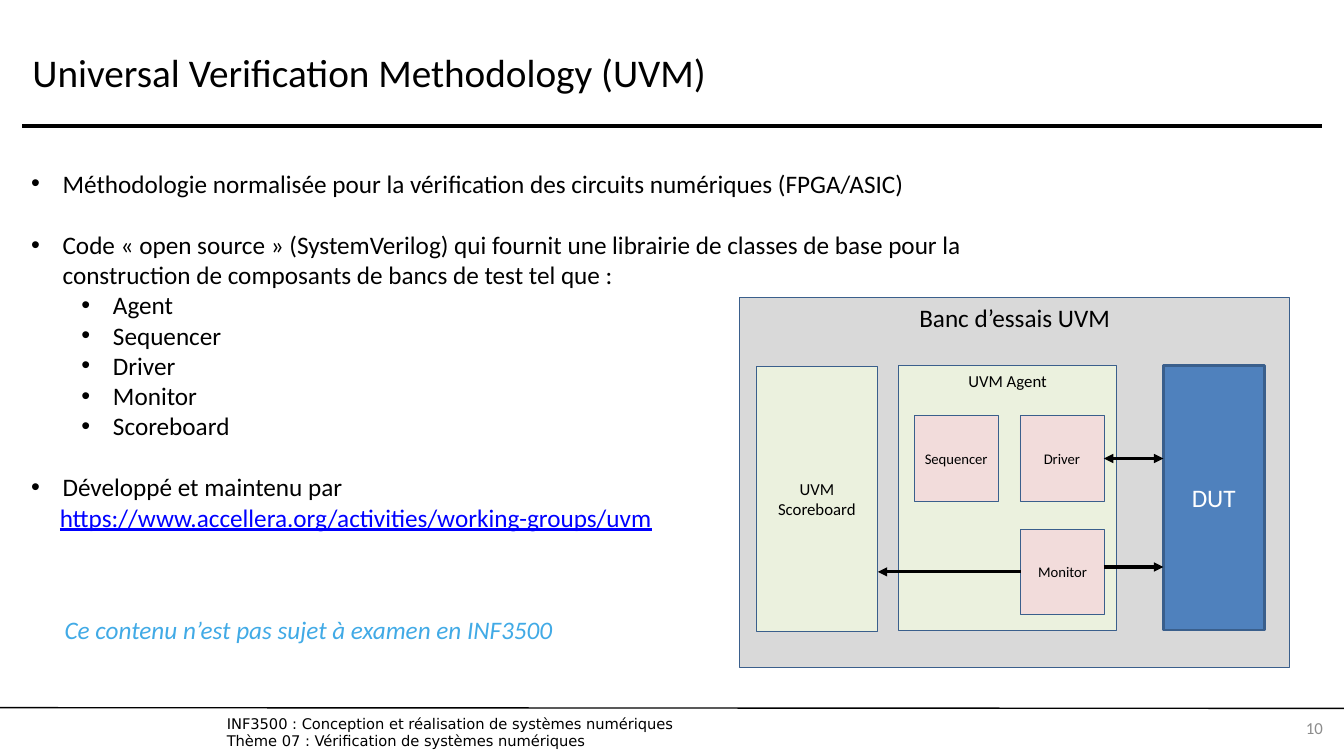
"""Build the slide on the Universal Verification Methodology."""
from lxml.etree import SubElement
from pptx import Presentation
from pptx.dml.color import RGBColor
from pptx.enum.shapes import MSO_CONNECTOR as Connector, MSO_SHAPE as Shape
from pptx.enum.text import MSO_ANCHOR as Anchor, MSO_AUTO_SIZE as AutoSize, PP_ALIGN as Align
from pptx.oxml.ns import qn
from pptx.util import Pt

COLORS = {
    "black": "000000", "white": "FFFFFF", "number": "8C8C8C", "link": "0000FF",
    "note": "41AAE6", "outline": "3A5F8C", "bench": "D9D9D9", "dut": "4F81BD",
    "block": "EBF1DE", "component": "F2DCDB",
}


def place(shape, bounds, **frame_format):
    """Position a shape and format its text frame."""
    for name, value in zip(("left", "top", "width", "height"), bounds):
        setattr(shape, name, Pt(value))
    settings = {"word_wrap": True, "auto_size": AutoSize.NONE, **frame_format}
    for name, value in settings.items():
        setattr(shape.text_frame, name, value)


def write(paragraph, text, color="black", align=Align.LEFT, **font_format):
    """Add one formatted run to a paragraph."""
    paragraph.alignment = align
    run = paragraph.add_run()
    run.text = text
    run.font.color.rgb = RGBColor.from_string(COLORS[color])
    for name, value in {"name": "Calibri", "size": Pt(18), **font_format}.items():
        setattr(run.font, name, value)


presentation = Presentation()
presentation.slide_width, presentation.slide_height = Pt(960), Pt(540)
slide = presentation.slides.add_slide(presentation.slide_layouts[1])
shapes = slide.shapes

title, body = slide.placeholders
place(title, (16, 12.5, 928, 77.5), vertical_anchor=Anchor.MIDDLE)
write(title.text_frame.paragraphs[0], "Universal Verification Methodology (UVM)", size=Pt(28))

place(body, (15, 116.5, 680, 334), vertical_anchor=Anchor.TOP)
items = [
    (0, 0, "Méthodologie normalisée pour la vérification des circuits numériques (FPGA/ASIC)"),
    (0, 22, "Code «\u00a0open source\u00a0» (SystemVerilog) qui fournit une librairie de classes "
            "de base pour la construction de composants de bancs de test tel que :"),
    (1, 0, "Agent"),
    (1, 0, "Sequencer"),
    (1, 0, "Driver"),
    (1, 0, "Monitor"),
    (1, 0, "Scoreboard"),
    (0, 22, "Développé et maintenu par"),
]
for index, (level, space, text) in enumerate(items):
    paragraph = body.text_frame.paragraphs[0] if index == 0 else body.text_frame.add_paragraph()
    paragraph.level, paragraph.space_before = level, Pt(space)
    properties = paragraph._p.get_or_add_pPr()
    properties.set("marL", str(Pt(22.5 + 36 * level)))
    properties.set("indent", str(Pt(-22.5)))
    SubElement(properties, qn("a:buChar"), char="•")
    write(paragraph, text)

address = body.text_frame.add_paragraph()
address.space_before = Pt(0)
properties = address._p.get_or_add_pPr()
properties.set("marL", str(Pt(20.5)))
properties.set("indent", "0")
SubElement(properties, qn("a:buNone"))
write(address, "https://www.accellera.org/activities/working-groups/uvm", "link", underline=True)

note = shapes.add_textbox(0, 0, 0, 0)
place(note, (39, 435, 414, 29))
write(note.text_frame.paragraphs[0], "Ce contenu n’est pas sujet à examen en INF3500", "note", italic=True)

blocks = [
    ("Banc d’essais UVM", (528.5, 212.5, 392.5, 264), "bench", 0.75, 18, Anchor.TOP),
    ("DUT", (831, 261, 72, 189), "dut", 2, 18, Anchor.MIDDLE),
    ("UVM Agent", (642, 261, 155.5, 189), "block", 0.5, 12, Anchor.TOP),
    ("UVM Scoreboard", (540, 262, 87, 189), "block", 0.5, 12, Anchor.MIDDLE),
    ("Driver", (728.5, 297, 60, 61), "component", 0.5, 10.5, Anchor.MIDDLE),
    ("Monitor", (729, 378, 60, 61), "component", 0.5, 10.5, Anchor.MIDDLE),
    ("Sequencer", (653, 297, 60, 61), "component", 0.5, 10.5, Anchor.MIDDLE),
]
for text, bounds, fill, line_width, size, anchor in blocks:
    block = shapes.add_shape(Shape.RECTANGLE, 0, 0, 0, 0)
    place(block, bounds, vertical_anchor=anchor, margin_left=Pt(5), margin_right=Pt(5))
    block.shadow.inherit = False
    block.fill.solid()
    block.fill.fore_color.rgb = RGBColor.from_string(COLORS[fill])
    block.line.color.rgb = RGBColor.from_string(COLORS["outline"])
    block.line.width = Pt(line_width)
    color = "white" if fill == "dut" else "black"
    write(block.text_frame.paragraphs[0], text, color, Align.CENTER, size=Pt(size))

lines = [
    ((16, 90, 944, 90), 3, ()),
    ((0, 505.5, 960, 506), 1, ()),
    ((788.5, 327.5, 831, 327.5), 2.25, ("headEnd", "tailEnd")),
    ((788.5, 405, 831, 405), 2.25, ("tailEnd",)),
    ((729, 408.5, 627, 408.5), 2.25, ("tailEnd",)),
]
for ends, width, arrowheads in lines:
    connector = shapes.add_connector(Connector.STRAIGHT, *map(Pt, ends))
    connector.line.color.rgb = RGBColor.from_string(COLORS["black"])
    connector.line.width = Pt(width)
    for arrowhead in arrowheads:
        SubElement(connector.line._get_or_add_ln(), qn(f"a:{arrowhead}"), type="triangle")
    SubElement(connector._element.spPr, qn("a:effectLst"))

footer = shapes.add_textbox(0, 0, 0, 0)
place(footer, (156, 510.5, 538.5, 25), vertical_anchor=Anchor.MIDDLE,
      margin_left=Pt(6), margin_top=0, margin_right=0, margin_bottom=0)
course, theme = footer.text_frame.paragraphs[0], footer.text_frame.add_paragraph()
footer_font = {"name": "DejaVu Sans", "size": Pt(10.5)}
write(course, "INF3500 : Conception et réalisation de systèmes numériques", **footer_font)
write(theme, "Thème 07 : Vérification de systèmes numériques", **footer_font)

page_number = shapes.add_textbox(0, 0, 0, 0)
place(page_number, (904, 505.5, 48, 29), vertical_anchor=Anchor.MIDDLE)
write(page_number.text_frame.paragraphs[0], "10", "number", Align.RIGHT, size=Pt(12))

presentation.save("out.pptx")
